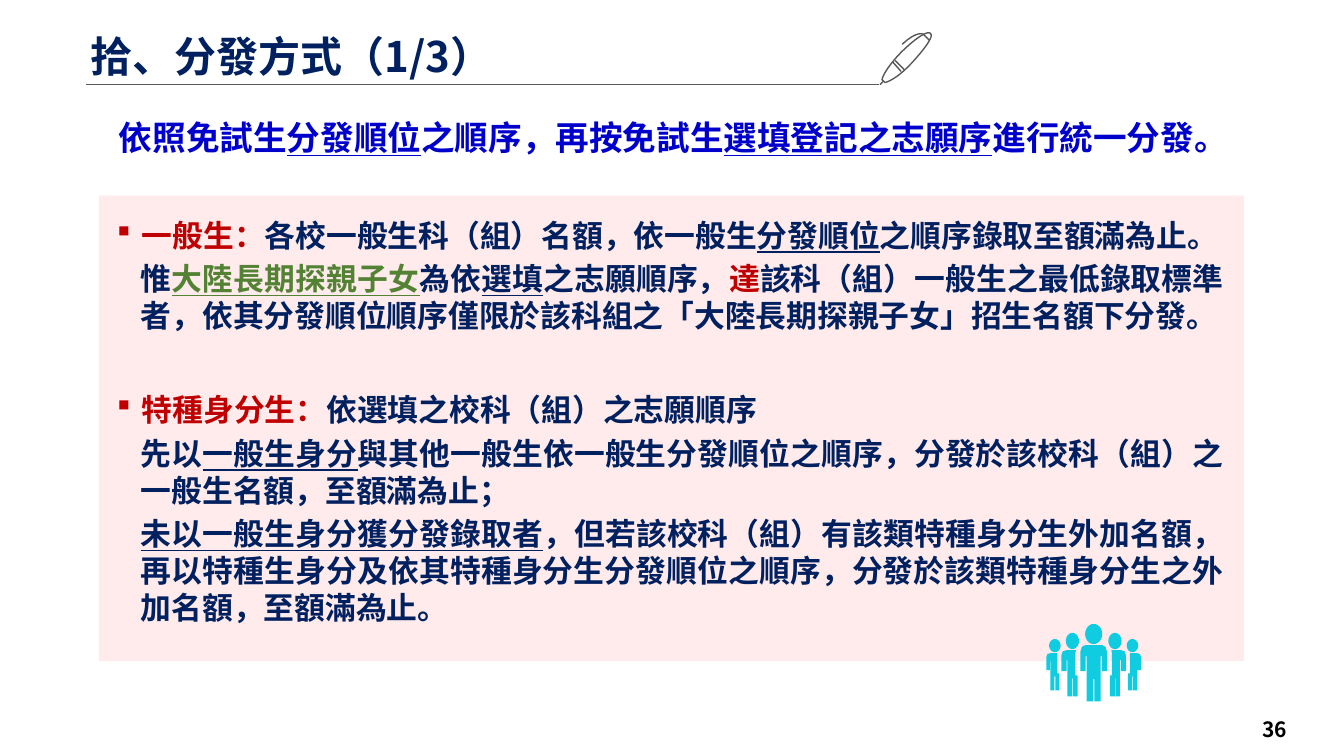
from math import cos, pi, sin

from lxml import etree
from pptx import Presentation
from pptx.dml.color import RGBColor
from pptx.enum.shapes import MSO_CONNECTOR, MSO_SHAPE
from pptx.enum.text import MSO_ANCHOR, PP_ALIGN
from pptx.oxml.ns import qn
from pptx.util import Pt

LEFT, RIGHT, FULL = PP_ALIGN.LEFT, PP_ALIGN.RIGHT, PP_ALIGN.JUSTIFY
TOP, MIDDLE = MSO_ANCHOR.TOP, MSO_ANCHOR.MIDDLE
RECT, STRAIGHT = MSO_SHAPE.RECTANGLE, MSO_CONNECTOR.STRAIGHT
FACE = "Noto Sans CJK SC"
NAVY, BLUE, RED, GREEN = "002060", "0000CC", "C00000", "548235"
BLACK, GRAY, PINK, CYAN = "000000", "595959", "FFEBEB", "10CCE0"

INTRO = [("依照免試生", BLUE, False), ("分發順位", BLUE, True),
         ("之順序，再按免試生", BLUE, False), ("選填登記之志願序", BLUE, True),
         ("進行統一分發。", BLUE, False)]

# Each rule: bulleted, space before, runs of (text, colour, underline)
RULES = [
    (True, 10, [("一般生：", RED, False),
                ("各校一般生科（組）名額，依一般生", NAVY, False),
                ("分發順位", NAVY, True),
                ("之順序錄取至額滿為止。", NAVY, False)]),
    (False, 5, [("惟", NAVY, False), ("大陸長期探親子女", GREEN, True),
                ("為依", NAVY, False), ("選填", NAVY, True),
                ("之志願順序，", NAVY, False), ("達", RED, False),
                ("該科（組）一般生之最低錄取標準者，依其分發順位順序僅限於"
                 "該科組之「大陸長期探親子女」招生名額下分發。", NAVY, False)]),
    (True, 41.2, [("特種身分生：", RED, False),
                  ("依選填之校科（組）之志願順序", NAVY, False)]),
    (False, 5, [("先以", NAVY, False), ("一般生身分", NAVY, True),
                ("與其他一般生依一般生分發順位之順序，分發於該校科（組）之"
                 "一般生名額，至額滿為止；", NAVY, False)]),
    (False, 5, [("未以一般生身分獲分發錄取者", NAVY, True),
                ("，但若該校科（組）有該類特種身分生外加名額，再以特種生身分及"
                 "依其特種身分生分發順位之順序，分發於該類特種身分生之外加名額，"
                 "至額滿為止。", NAVY, False)]),
]

# Pen strokes: a start point, then line ends (2 numbers) or Bézier curves (6)
PEN = [
    [(643.7, 51.1), (637.9, 44.6)],
    [(639.4, 43.2), (645.8, 49.7)],
    [(664.6, 23.8), (662.4, 21.6, 653, 28.1, 643.7, 37.4),
     (635.8, 45.4, 630.7, 53.3, 630, 56.9), (632.2, 59),
     (635.8, 58.3, 643.7, 53.3, 650.9, 45.4),
     (660.2, 35.3, 667.4, 25.9, 664.6, 23.8)],
    [(630.7, 58.3), (628.6, 60.5)],
    [(663.8, 28.8), (659.5, 24.5), (659.5, 24.5, 655.2, 21.6, 644.4, 31.7)],
]

# Crowd, as distances right of its axis; the left half is mirrored
AXIS = 781.2
HEADS = [(0, 452.9, 6.1, 7.2), (15.2, 457.9, 4.7, 5.8), (27.7, 461.2, 4.1, 4.7)]
CHIEF = [(0, 460.8), (5.8, 460.8), (8.4, 462), (9.4, 465.1), (9.4, 479.5),
         (5.8, 479.5), (5.8, 468.7), (5, 468.7), (5, 501.1), (0.5, 501.1),
         (0.5, 485.3), (0, 485.3)]
SIDE = [
    [(11.5, 482.4), (11.5, 497.5), (15.1, 497.5), (15.1, 484.6), (15.6, 484.6),
     (15.6, 497.5), (18.7, 497.5), (18.7, 471.6), (19.4, 471.6), (19.4, 479.5),
     (23, 479.5), (23, 468), (22.2, 465.4), (19.4, 464.4), (12.6, 464.4),
     (13, 466), (13, 482.4)],
    [(24.5, 481), (24.5, 493.2), (27.4, 493.2), (27.4, 483.1), (28.1, 483.1),
     (28.1, 493.2), (31, 493.2), (31, 472.3), (31.3, 472.3), (31.3, 478.8),
     (33.8, 478.8), (33.8, 469.4), (33.1, 467.3), (31, 466.6), (25.9, 466.6),
     (25.9, 481)],
]


def tint(code):
    return RGBColor.from_string(code)


def apply(target, values):
    for name, value in values.items():
        setattr(target, name, value)


def add_runs(para, runs, size):
    for text, color, under in runs:
        run = para.add_run()
        run.text = text
        apply(run.font, {"name": FACE, "size": Pt(size), "bold": True,
                         "underline": under})
        run.font.color.rgb = tint(color)
        etree.SubElement(run.font._element, qn("a:ea"), typeface=FACE)


def add_box(slide, x, y, w, h, anchor=TOP, inset=0):
    frame = slide.shapes.add_textbox(Pt(x), Pt(y), Pt(w), Pt(h)).text_frame
    apply(frame, {"word_wrap": True, "vertical_anchor": anchor,
                  "margin_left": Pt(7.2), "margin_right": Pt(7.2),
                  "margin_top": Pt(inset), "margin_bottom": Pt(0)})
    return frame


def add_label(slide, place, runs, size, anchor=TOP, **style):
    para = add_box(slide, *place, anchor).paragraphs[0]
    apply(para, style)
    add_runs(para, runs, size)


def indent(para, bullet):
    props = para._p.get_or_add_pPr()
    props.set("marL", str(Pt(18 if bullet else 17.3)))
    props.set("indent", str(Pt(-18 if bullet else 0)))
    if bullet:
        shade = etree.SubElement(props, qn("a:buClr"))
        etree.SubElement(shade, qn("a:srgbClr"), val=RED)
        etree.SubElement(props, qn("a:buFont"), typeface="Wingdings")
        etree.SubElement(props, qn("a:buChar"), char="§")


def add_rules(slide):
    frame = add_box(slide, 76.3, 149, 805, 323.3, inset=5.8)
    for i, (bullet, gap, runs) in enumerate(RULES):
        para = frame.add_paragraph() if i else frame.paragraphs[0]
        apply(para, {"alignment": FULL, "line_spacing": Pt(26.2),
                     "space_before": Pt(gap), "level": 0 if bullet else 1})
        indent(para, bullet)
        add_runs(para, runs, 22)


def trace(start, *parts):
    """Turn a stroke of lines and Bézier curves into points."""
    dots = [start]
    for part in parts:
        if len(part) == 2:
            dots.append(part)
            continue
        x, y = dots[-1]
        a, b, c, d, e, f = part
        for t in (k / 8 for k in range(1, 9)):
            u = 1 - t
            w = (u ** 3, 3 * u * u * t, 3 * u * t * t, t ** 3)
            dots.append(tuple(sum(m * n for m, n in zip(w, row))
                              for row in ((x, a, c, e), (y, b, d, f))))
    return dots


def oval(x, y, rx, ry):
    turns = [k * pi / 12 for k in range(24)]
    return [(x + rx * cos(t), y + ry * sin(t)) for t in turns]


def flip(dots):
    return [(-x, y) for x, y in reversed(dots)]


def add_free(slide, paths, close):
    maker = None
    for dots in paths:
        first, *rest = [(Pt(x), Pt(y)) for x, y in dots]
        if maker:
            maker.move_to(*first)
        else:
            maker = slide.shapes.build_freeform(*first)
        maker.add_line_segments(rest, close=close)
    shape = maker.convert_to_shape()
    shape.shadow.inherit = False
    return shape


def add_pen(slide):
    pen = add_free(slide, [trace(*stroke) for stroke in PEN], False)
    pen.fill.background()
    pen.line.color.rgb = tint(GRAY)
    pen.line.width = Pt(1)


def fill_plain(shape, color):
    shape.fill.solid()
    shape.fill.fore_color.rgb = tint(color)
    shape.line.fill.background()


def add_crowd(slide):
    side = SIDE + [oval(*head) for head in HEADS[1:]]
    paths = [CHIEF + flip(CHIEF), oval(*HEADS[0])]
    paths += side + [flip(dots) for dots in side]
    moved = [[(AXIS + x, y) for x, y in dots] for dots in paths]
    fill_plain(add_free(slide, moved, True), CYAN)


def add_rule(slide, x, y, end):
    line = slide.shapes.add_connector(STRAIGHT, Pt(x), Pt(y), Pt(end), Pt(y))
    line.line.color.rgb = tint(GRAY)
    line.line.width = Pt(0.5)
    etree.SubElement(line._element.spPr, qn("a:effectLst"))


def add_panel(slide, x, y, w, h):
    panel = slide.shapes.add_shape(RECT, Pt(x), Pt(y), Pt(w), Pt(h))
    panel.shadow.inherit = False
    fill_plain(panel, PINK)


def main():
    deck = Presentation()
    apply(deck, {"slide_width": Pt(960), "slide_height": Pt(540)})
    slide = deck.slides.add_slide(deck.slide_layouts[6])
    add_rule(slide, 61.4, 60.5, 627.8)
    add_pen(slide)
    add_label(slide, (57.6, 25.9, 568, 34.6),
              [("拾、分發方式（1/3）", NAVY, False)], 30, line_spacing=0.9)
    add_label(slide, (754.6, 510.5, 172, 20.9), [("36", BLACK, False)], 15,
              MIDDLE, alignment=RIGHT)
    add_panel(slide, 70.6, 139.7, 818, 332.6)
    add_label(slide, (77.8, 83.5, 805, 66.2), INTRO, 24,
              alignment=LEFT, space_before=Pt(9))
    add_crowd(slide)
    add_rules(slide)
    deck.save("out.pptx")


if __name__ == "__main__":
    main()
